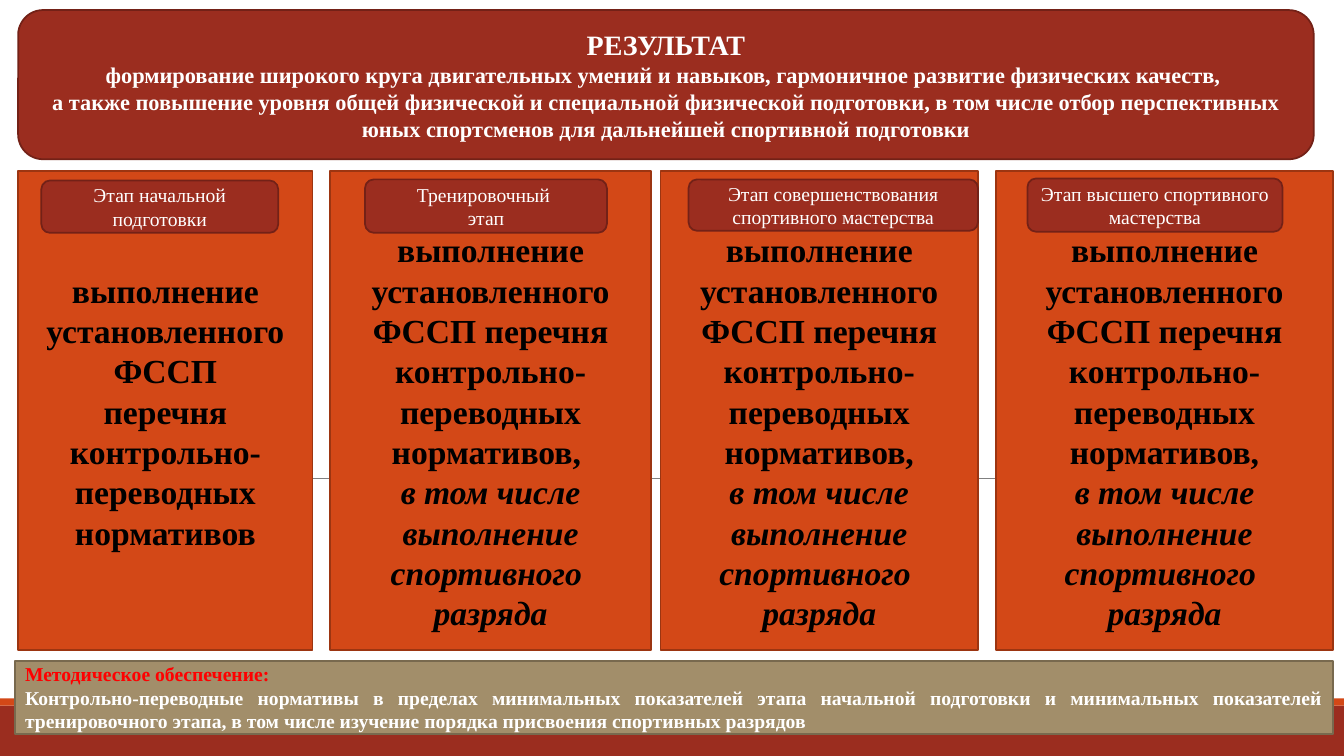
import pptx
import pptx.util
import pptx.dml.color
import pptx.enum.shapes
import pptx.enum.text
import pptx.oxml.ns
import lxml.etree

W, H = 13.33, 7.5
FONT = "Times New Roman"
COLORS = {
    "brick": "9B2D1F", "brick_edge": "732117",
    "orange": "D34817", "orange_edge": "9C3511",
    "khaki": "A28E6A", "khaki_edge": "78694E",
    "white": "FFFFFF", "black": "000000", "red": "FF0000", "gray": "808080",
}
RECT = pptx.enum.shapes.MSO_SHAPE.RECTANGLE
ROUND = pptx.enum.shapes.MSO_SHAPE.ROUNDED_RECTANGLE
CENTER = pptx.enum.text.PP_ALIGN.CENTER
LEFT = pptx.enum.text.PP_ALIGN.LEFT
JUSTIFY = pptx.enum.text.PP_ALIGN.JUSTIFY

CARD_TOP, CARD_H = 1.7, 4.75
NORMS = "выполнение установленного ФССП перечня контрольно-переводных нормативов,"
RANK = ["в том числе выполнение спортивного ", "разряда"]
FIRST_STAGE = ["выполнение установленного ФССП", "перечня контрольно-переводных нормативов"]

# Card left and width, label box inside the card, label lines, plain lines, italic lines
STAGES = [
    (0.18, 2.92, (0.23, 0.09, 2.35, 0.52), ["Этап начальной подготовки"], FIRST_STAGE, []),
    (3.27, 3.19, (0.35, 0.08, 2.4, 0.53), ["Тренировочный ", "этап"], [NORMS + " "], RANK),
    (6.55, 3.15, (0.28, 0.08, 2.87, 0.51), ["Этап совершенствования спортивного мастерства"], [NORMS], RANK),
    (9.88, 3.34, (0.31, 0.07, 2.53, 0.53), ["Этап высшего спортивного мастерства"], [NORMS], RANK),
]


def rgb(name):
    return pptx.dml.color.RGBColor.from_string(COLORS[name])


def add_box(s, kind, box, fill, edge=None):
    sp = s.shapes.add_shape(kind, *(pptx.util.Inches(v) for v in box))
    sp.shadow.inherit = False
    sp.fill.solid()
    sp.fill.fore_color.rgb = rgb(fill)
    if edge:
        sp.line.color.rgb = rgb(edge)
        sp.line.width = pptx.util.Pt(1.25)
    else:
        sp.line.fill.background()
    return sp


def write(sp, lines, insets=(0.1, 0.05, 0.1, 0.05)):
    """Each line is (text, size, color, bold, italic, alignment)."""
    tf = sp.text_frame
    tf.word_wrap = True
    tf.vertical_anchor = pptx.enum.text.MSO_ANCHOR.MIDDLE
    tf.margin_left, tf.margin_top, tf.margin_right, tf.margin_bottom = (
        pptx.util.Inches(v) for v in insets)
    tf.text = "\n".join(line[0] for line in lines)
    for p, (_, size, color, bold, italic, align) in zip(tf.paragraphs, lines):
        p.alignment = align
        for r in p.runs:
            r.font.name = FONT
            r.font.size = pptx.util.Pt(size)
            r.font.bold, r.font.italic = bold, italic
            r.font.color.rgb = rgb(color)


def add_backdrop(s):
    # Bottom bands
    add_box(s, RECT, (0, 7, W, 0.5), "brick")
    add_box(s, RECT, (0, 6.93, W, 0.07), "orange")
    # Thin line behind the cards
    y = pptx.util.Inches(4.75)
    line = s.shapes.add_connector(pptx.enum.shapes.MSO_CONNECTOR.STRAIGHT,
                                  pptx.util.Inches(1.32), y, pptx.util.Inches(12.12), y)
    line.line.color.rgb = rgb("gray")
    line.line.width = pptx.util.Pt(0.5)
    lxml.etree.SubElement(line._element.spPr, pptx.oxml.ns.qn("a:effectLst"))


def add_header(s, box):
    texts = [
        ("РЕЗУЛЬТАТ", 20),
        ("формирование широкого круга двигательных умений и навыков, "
         "гармоничное развитие физических качеств, ", 16),
        ("а также повышение уровня общей физической и специальной физической подготовки, "
         "в том числе отбор перспективных юных спортсменов для дальнейшей спортивной подготовки", 16),
    ]
    sp = add_box(s, ROUND, box, "brick", "brick_edge")
    write(sp, [(text, size, "white", True, False, CENTER) for text, size in texts])


def add_stage(s, box, label_box, label, plain, italic):
    left, top, _, _ = box
    # Card, its text one line lower where a longer text follows the label
    card = add_box(s, RECT, box, "orange", "orange_edge")
    lines = [(t, 24, "black", True, False, CENTER) for t in plain]
    lines += [(t, 24, "black", True, True, CENTER) for t in italic]
    write(card, lines, (0, 0.4, 0, 0) if italic else (0.04, 0, 0.04, 0))
    # Stage label
    dx, dy, w, h = label_box
    sp = add_box(s, ROUND, (left + dx, top + dy, w, h), "brick", "brick_edge")
    write(sp, [(t, 14, "white", False, False, CENTER) for t in label])


def add_footer(s, box):
    sp = add_box(s, RECT, box, "khaki", "khaki_edge")
    write(sp, [
        ("Методическое обеспечение:", 14, "red", True, False, LEFT),
        ("Контрольно-переводные нормативы в пределах минимальных показателей этапа "
         "начальной подготовки и минимальных показателей тренировочного этапа, "
         "в том числе изучение порядка присвоения спортивных разрядов",
         14, "white", True, False, JUSTIFY),
    ])


def main():
    prs = pptx.Presentation()
    prs.slide_width, prs.slide_height = pptx.util.Inches(W), pptx.util.Inches(H)
    s = prs.slides.add_slide(prs.slide_layouts[6])
    add_backdrop(s)
    add_header(s, (0.18, 0.1, 12.85, 1.48))
    for left, width, *parts in STAGES:
        add_stage(s, (left, CARD_TOP, width, CARD_H), *parts)
    add_footer(s, (0.15, 6.56, 13.07, 0.72))
    prs.save("out.pptx")


if __name__ == "__main__":
    main()
